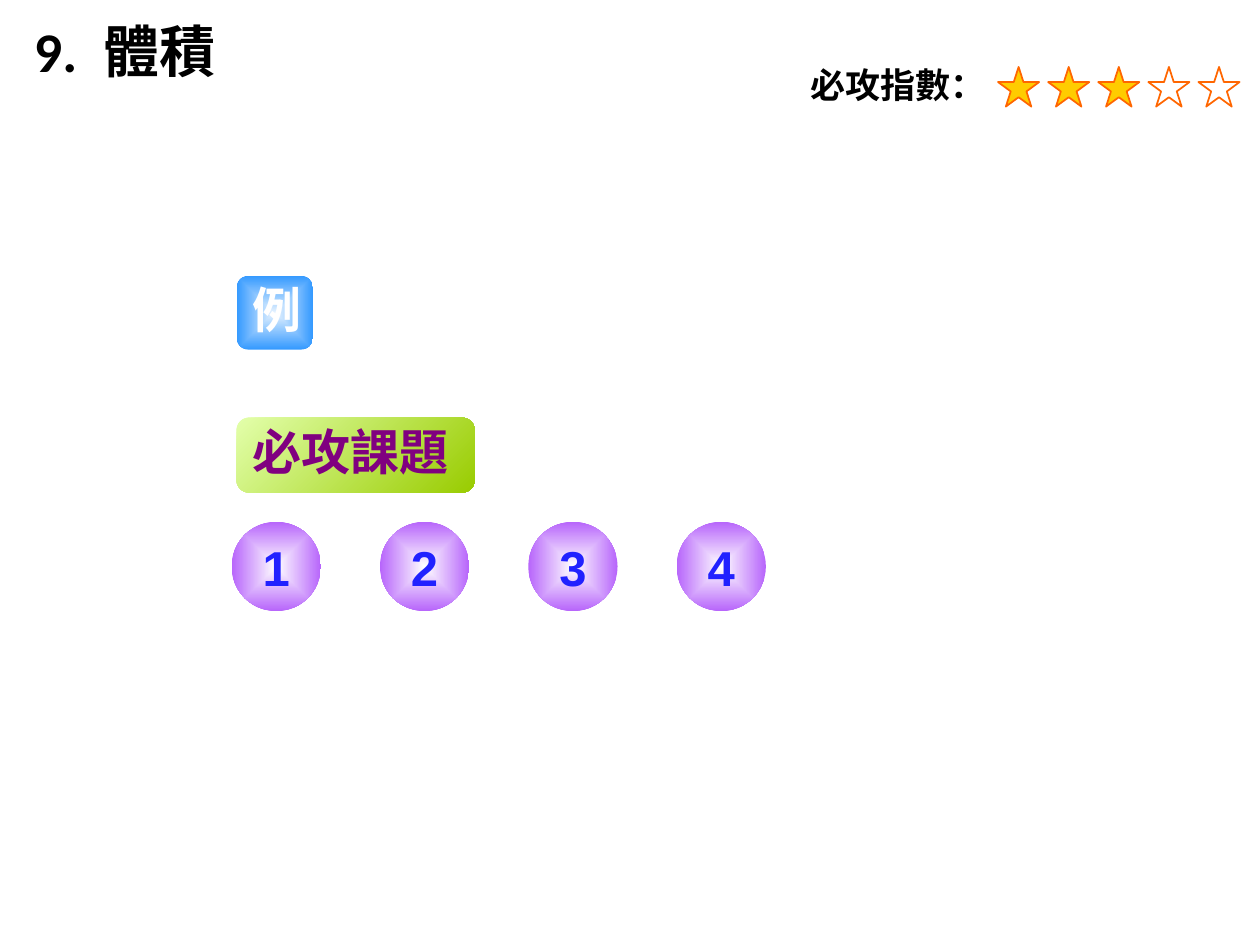
import pptx
import pptx.dml.color
import pptx.enum.dml
import pptx.enum.shapes
import pptx.enum.text
import pptx.oxml
import pptx.oxml.ns
import pptx.util

Cm, Pt = pptx.util.Cm, pptx.util.Pt
SHAPE = pptx.enum.shapes.MSO_SHAPE
ALIGN = pptx.enum.text.PP_ALIGN
ANCHOR = pptx.enum.text.MSO_ANCHOR
CJK = "Noto Sans CJK SC"

TITLE = "9.\t體積"
RATING_LABEL = "必攻指數："
RATING, RATING_MAX = 3, 5
TOPIC_NUMBERS = ["1", "2", "3", "4"]
# text, left, top, width, height, text colour, alignment, gradient colours, from centre
BADGES = [
    ("必攻課題", 4.77, 8.42, 4.8, 1.51, "800080", ALIGN.LEFT, ("E3FFAB", "99CC00"), False),
    ("例", 4.77, 5.56, 1.54, 1.49, "FFFFFF", ALIGN.CENTER, ("E5F2FF", "3399FF"), True),
]
STAR_LEFT, STAR_TOP, STAR_WIDTH, STAR_HEIGHT, STAR_PITCH = 20.12, 1.35, 0.83, 0.8, 1.01
TOPIC_LEFT, TOPIC_TOP, TOPIC_SIZE, TOPIC_PITCH = 4.67, 10.52, 1.8, 2.99


def rgb(value):
    return pptx.dml.color.RGBColor.from_string(value)


def xml(tag, body=""):
    return pptx.oxml.parse_xml(f"<a:{tag} {pptx.oxml.ns.nsdecls('a')}>{body}</a:{tag.split()[0]}>")


def write(shape, text, size, colour, font="Arial", align=ALIGN.LEFT, spacing=None,
          anchor=ANCHOR.TOP, wrap=True, tab=None):
    frame = shape.text_frame
    frame.word_wrap = wrap
    frame.vertical_anchor = anchor
    frame.auto_size = pptx.enum.text.MSO_AUTO_SIZE.NONE
    paragraph = frame.paragraphs[0]
    paragraph.alignment = align
    paragraph.line_spacing = spacing
    if tab:
        paragraph._p.get_or_add_pPr().append(
            xml("tabLst", f'<a:tab pos="{Cm(tab)}" algn="l"/>'))
    run = paragraph.add_run()
    run.text = text
    for name, value in {"name": font, "size": Pt(size), "bold": True}.items():
        setattr(run.font, name, value)
    run.font.color.rgb = rgb(colour)
    run.font._element.find(pptx.oxml.ns.qn("a:latin")).addnext(xml(f'ea typeface="{CJK}"'))


def add_shape(slide, kind, *box):
    shape = slide.shapes.add_shape(kind, *map(Cm, box))
    shape.shadow.inherit = False
    return shape


def fill_gradient(shape, colours, from_centre):
    shape.line.fill.background()
    shape.fill.gradient()
    for stop, colour in zip(shape.fill.gradient_stops, colours):
        stop.color.rgb = rgb(colour)
    if from_centre:
        direction = shape._element.spPr.find(".//" + pptx.oxml.ns.qn("a:lin"))
        direction.getparent().replace(direction, xml(
            'path path="shape"', '<a:fillToRect l="50000" t="50000" r="50000" b="50000"/>'))
    else:
        shape.fill.gradient_angle = 315


def main():
    presentation = pptx.Presentation()
    presentation.slide_width, presentation.slide_height = Cm(25.4), Cm(19.05)
    slide = presentation.slides.add_slide(presentation.slide_layouts[5])

    title = slide.shapes.title
    for name, value in {"left": 0.43, "top": 0.36, "width": 11.28, "height": 2.08}.items():
        setattr(title, name, Cm(value))
    write(title, TITLE, 32, "000000", "Calibri", spacing=0.9, tab=1.4)

    rating_label = slide.shapes.add_textbox(Cm(16.08), Cm(1.24), Cm(5.05), Cm(1.19))
    write(rating_label, RATING_LABEL, 20, "000000", spacing=Pt(21.6))

    for i in range(RATING_MAX):
        star = add_shape(slide, SHAPE.STAR_5_POINT, STAR_LEFT + i * STAR_PITCH, STAR_TOP,
                         STAR_WIDTH, STAR_HEIGHT)
        star.fill.solid()
        star.fill.fore_color.rgb = rgb("FFCC00" if i < RATING else "FFFFFF")
        star.line.color.rgb = rgb("FF6600")
        star.line.width = Pt(1)

    for i, number in enumerate(TOPIC_NUMBERS):
        topic = add_shape(slide, SHAPE.OVAL, TOPIC_LEFT + i * TOPIC_PITCH, TOPIC_TOP,
                          TOPIC_SIZE, TOPIC_SIZE)
        fill_gradient(topic, ("FFFFFF", "B765FB"), True)
        write(topic, number, 28, "2121FF", align=ALIGN.CENTER, anchor=ANCHOR.MIDDLE, wrap=False)

    for text, left, top, width, height, colour, align, colours, from_centre in BADGES:
        badge = add_shape(slide, SHAPE.ROUNDED_RECTANGLE, left, top, width, height)
        fill_gradient(badge, colours, from_centre)
        write(badge, text, 28, colour, CJK, align, Pt(30))

    presentation.save("out.pptx")


if __name__ == "__main__":
    main()
